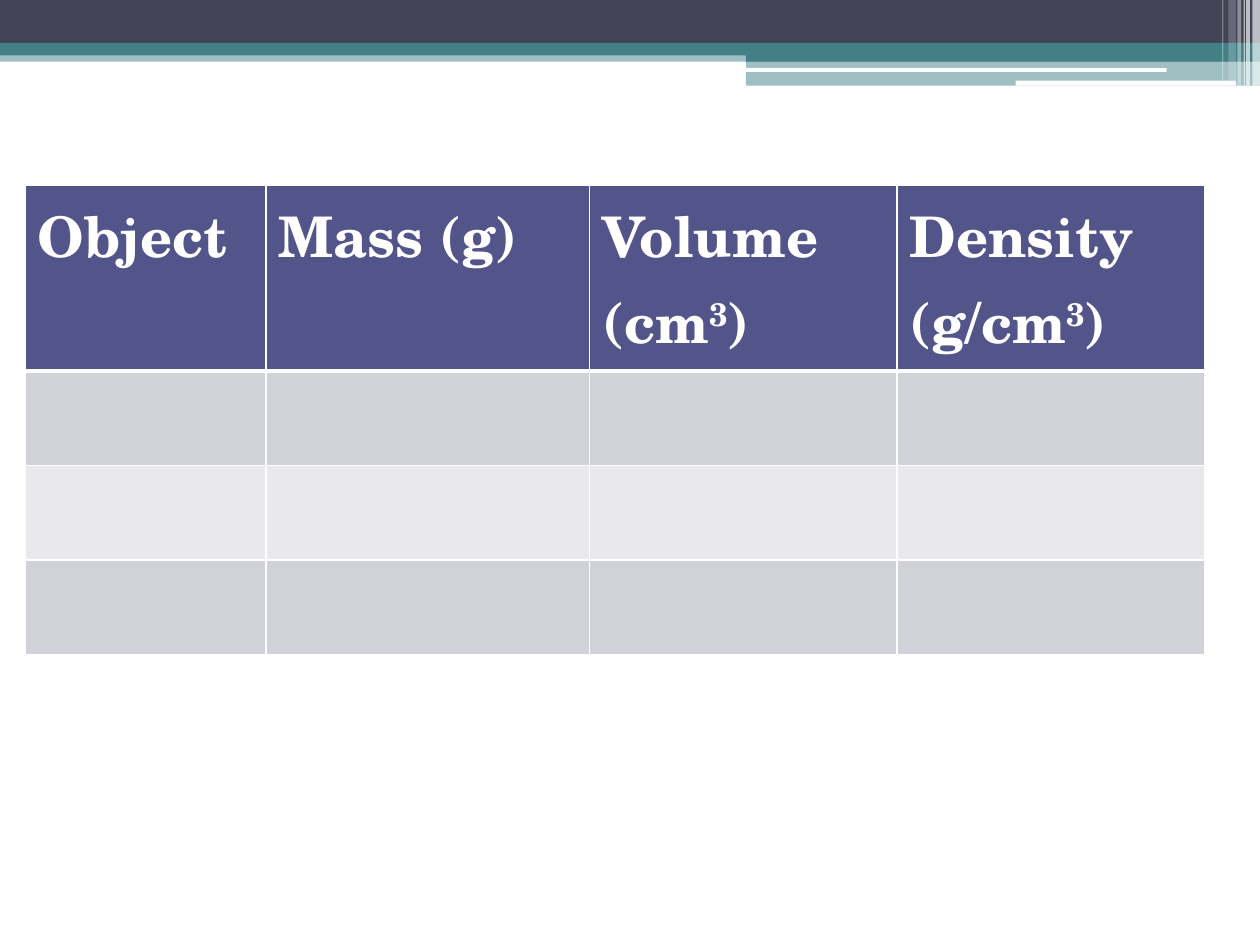
"""Build a density worksheet slide: a banded header and an empty measurement table."""
from lxml.etree import SubElement
from pptx import Presentation
from pptx.dml.color import RGBColor
from pptx.enum.shapes import MSO_SHAPE
from pptx.oxml.ns import qn
from pptx.util import Inches, Pt


def paint(fill, color, opacity=100):
    fill.solid()
    fill.fore_color.rgb = RGBColor.from_string(color)
    if opacity < 100:
        tint = fill._xPr.find(qn("a:solidFill"))[0]
        SubElement(tint, qn("a:alpha"), val=str(opacity * 1000))


def edge(cell, side, points):
    line = SubElement(cell._tc.get_or_add_tcPr(), qn(f"a:{side}"), w=str(Pt(points)))
    SubElement(SubElement(line, qn("a:solidFill")), qn("a:srgbClr"), val="FFFFFF")


deck = Presentation()
deck.slide_width, deck.slide_height = Inches(10), Inches(7.5)
slide = deck.slides.add_slide(deck.slide_layouts[6])

NAVY, TEAL, WHITE = "424456", "438086", "FFFFFF"
BAR, ROUNDED = MSO_SHAPE.RECTANGLE, MSO_SHAPE.ROUNDED_RECTANGLE
bands = [
    (BAR, 0, 0.4, 10, 0.09, TEAL, 50),
    (BAR, 0, 0, 10, 0.34, NAVY, 100),
    (BAR, 0, 0.34, 10, 0.1, TEAL, 100),
    (BAR, 5.92, 0.39, 4.08, 0.1, TEAL, 100),
    (BAR, 5.92, 0.48, 4.08, 0.2, TEAL, 50),
    (ROUNDED, 5.91, 0.54, 3.35, 0.03, WHITE, 100),
    (ROUNDED, 8.06, 0.64, 1.75, 0.04, WHITE, 100),
]
stripes = [
    (9.94, 0.06, 0.68, 65),
    (9.89, 0.03, 0.68, 65),
    (9.87, 0.01, 0.68, 60),
    (9.82, 0.03, 0.68, 40),
    (9.75, 0.06, 0.64, 20),
    (9.7, 0.01, 0.64, 30),
]
bands += [(BAR, left, 0, width, height, WHITE, opacity)
          for left, width, height, opacity in stripes]

for outline, left, top, width, height, color, opacity in bands:
    band = slide.shapes.add_shape(
        outline, Inches(left), Inches(top), Inches(width), Inches(height))
    band.shadow.inherit = False
    band.line.fill.background()
    paint(band.fill, color, opacity)

headings = [
    [["Object"]],
    [["Mass (g)"]],
    [["Volume (cm", "3", ")"]],
    [["Density"], ["(g/cm", "3", ")"]],
]
column_widths = [1.91, 2.57, 2.44, 2.44]
row_heights = [1.47, 0.75, 0.75, 0.75]
row_colors = ["53548A", "D1D1DA", "E9E9ED", "D1D1DA"]

measurements = slide.shapes.add_table(
    len(row_heights), len(column_widths), Inches(0.2), Inches(1.47),
    Inches(sum(column_widths)), Inches(sum(row_heights))).table
for column, width in zip(measurements.columns, column_widths):
    column.width = Inches(width)

for index, (row, height, color) in enumerate(
        zip(measurements.rows, row_heights, row_colors)):
    row.height = Inches(height)
    for cell in row.cells:
        for side in ("lnL", "lnR", "lnT", "lnB"):
            below_header = (index, side) in [(0, "lnB"), (1, "lnT")]
            edge(cell, side, 3 if below_header else 1)
        paint(cell.fill, color)

for cell, lines in zip(measurements.rows[0].cells, headings):
    frame = cell.text_frame
    for number, pieces in enumerate(lines):
        paragraph = frame.add_paragraph() if number else frame.paragraphs[0]
        for piece in pieces:
            run = paragraph.add_run()
            run.text = piece
            run.font.name = "TeX Gyre Schola"
            run.font.size = Pt(32)
            run.font.bold = True
            paint(run.font.fill, WHITE)
            if piece == "3":
                run._r.get_or_add_rPr().set("baseline", "30000")

deck.save("out.pptx")
